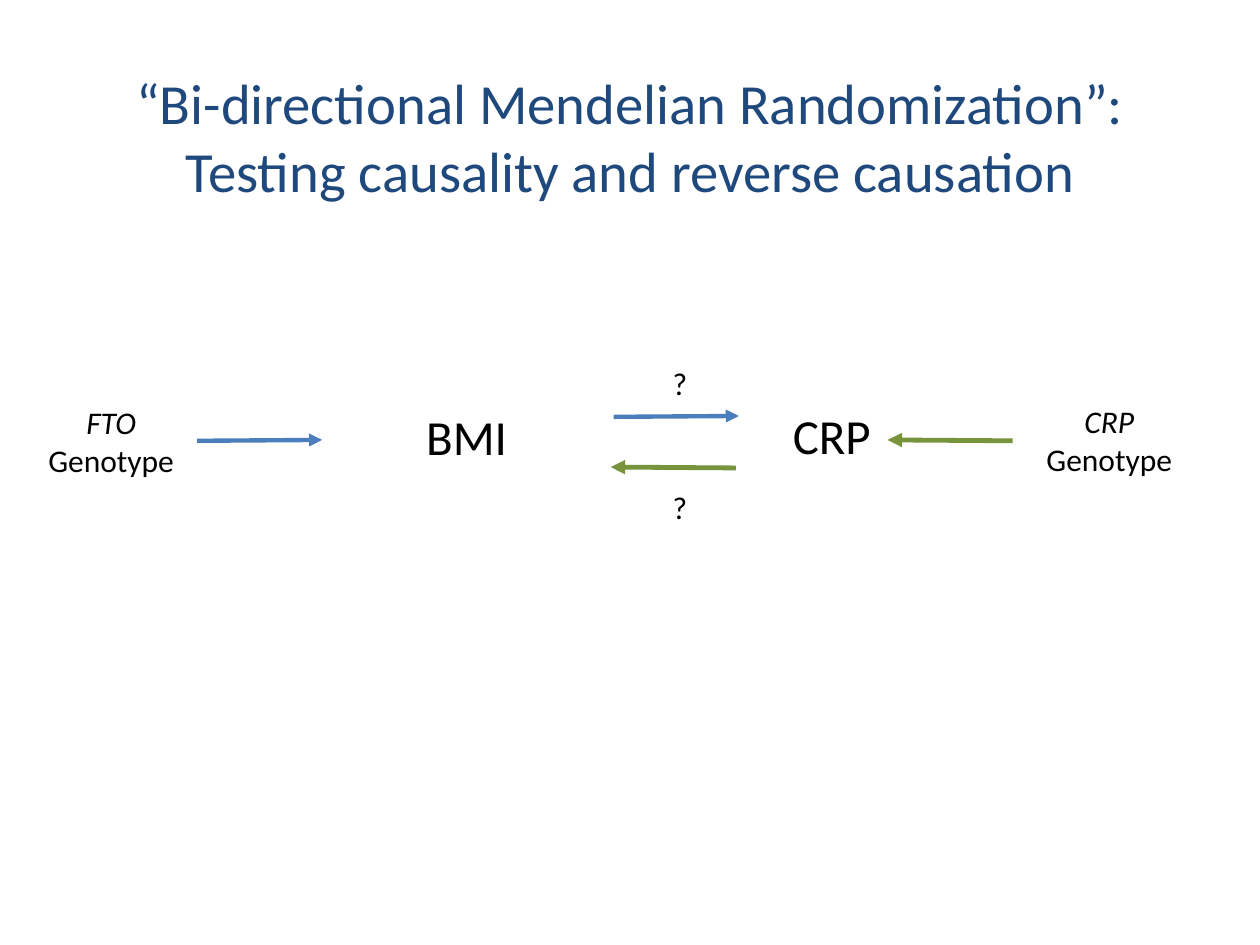
from lxml import etree
from pptx import Presentation
from pptx.dml.color import RGBColor
from pptx.enum.shapes import MSO_CONNECTOR
from pptx.enum.text import MSO_ANCHOR, MSO_AUTO_SIZE, PP_ALIGN
from pptx.oxml.ns import qn
from pptx.util import Pt

FONT = "Calibri"
BLACK, NAVY, BLUE, GREEN = "000000", "1F497D", "4B7EBC", "77933C"


def rgb(value):
    return RGBColor.from_string(value)


def add_run(p, text, size, color=BLACK, italic=False):
    r = p.add_run()
    r.text = text
    r.font.name = FONT
    r.font.size = Pt(size)
    r.font.italic = italic
    r.font.color.rgb = rgb(color)


def add_title(slide, lines, x, y, w, h):
    sp = slide.shapes.title
    sp.left, sp.top, sp.width, sp.height = Pt(x), Pt(y), Pt(w), Pt(h)
    tf = sp.text_frame
    tf.word_wrap = True
    tf.auto_size = MSO_AUTO_SIZE.NONE
    tf.vertical_anchor = MSO_ANCHOR.MIDDLE
    p = tf.paragraphs[0]
    p.alignment = PP_ALIGN.CENTER
    for i, line in enumerate(lines):
        if i:
            p.add_line_break()
        add_run(p, line, 32.4, NAVY)


def add_label(slide, lines, x, y, w, h, size=18, wrap=False,
              align=PP_ALIGN.CENTER):
    """Add a text box; each line is a (text, italic) pair."""
    tf = slide.shapes.add_textbox(Pt(x), Pt(y), Pt(w), Pt(h)).text_frame
    tf.word_wrap = wrap
    tf.auto_size = MSO_AUTO_SIZE.SHAPE_TO_FIT_TEXT
    for i, (text, italic) in enumerate(lines):
        p = tf.add_paragraph() if i else tf.paragraphs[0]
        p.alignment = align
        add_run(p, text, size, italic=italic)


def add_arrow(slide, x1, y1, x2, y2, color, width):
    s = slide.shapes.add_connector(MSO_CONNECTOR.STRAIGHT,
                                   Pt(x1), Pt(y1), Pt(x2), Pt(y2))
    s.line.color.rgb = rgb(color)
    s.line.width = Pt(width)
    etree.SubElement(s.line._get_or_add_ln(), qn("a:tailEnd"), type="triangle")
    etree.SubElement(s._element.spPr, qn("a:effectLst"))


def add_causal_diagram(slide, x, y):
    """Draw genotype, trait, trait, genotype in a row, with arrows between."""
    for gene, dx, dy in (("FTO", 0, 22.3), ("CRP", 570.4, 21.6)):
        add_label(slide, [(gene, True), ("Genotype", False)],
                  x + dx, y + dy, 87, 51)
    for trait, dx, dy, w in (("BMI", 175.6, 24.4, 142),
                             ("CRP", 409.8, 23.8, 91)):
        add_label(slide, [(trait, False)], x + dx, y + dy, w, 41,
                  size=28, wrap=True)
    for dy in (0, 70.6):
        add_label(slide, [("?", False)], x + 357.2, y + dy, 23, 29,
                  align=PP_ALIGN.LEFT)

    length = 71.5
    for dx, dy in ((92.6, 47.4), (330.7, 33.7)):
        add_arrow(slide, x + dx, y + dy, x + dx + length, y + dy - 0.5,
                  BLUE, 2.5)
    for dx, dy in ((558.7, 47.4), (400.5, 62.9)):
        add_arrow(slide, x + dx, y + dy, x + dx - length, y + dy - 0.5,
                  GREEN, 2.75)


def main():
    prs = Presentation()
    prs.slide_width, prs.slide_height = Pt(720), Pt(540)
    slide = prs.slides.add_slide(prs.slide_layouts[5])
    add_title(slide, ["“Bi-directional Mendelian Randomization”:",
                      "Testing causality and reverse causation"],
              36, 32.4, 648, 90)
    add_causal_diagram(slide, 20, 204.5)
    prs.save("out.pptx")


if __name__ == "__main__":
    main()
